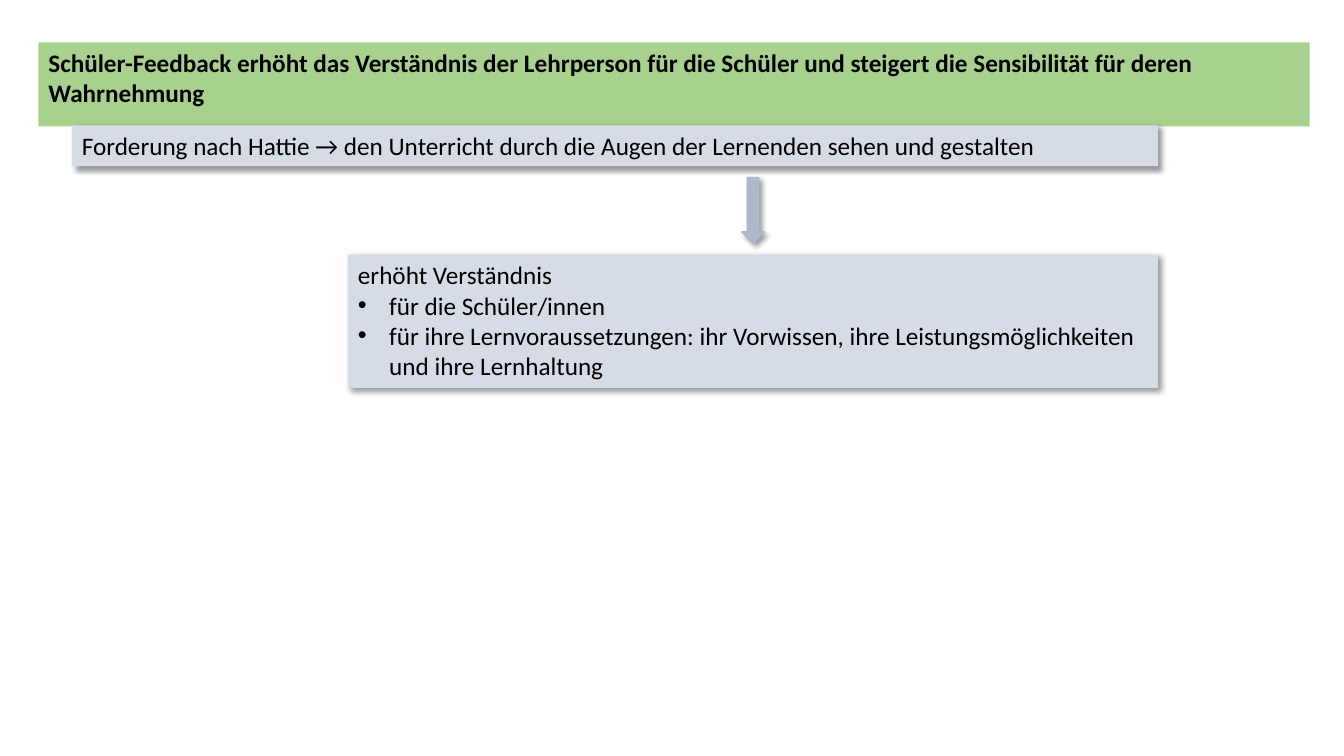
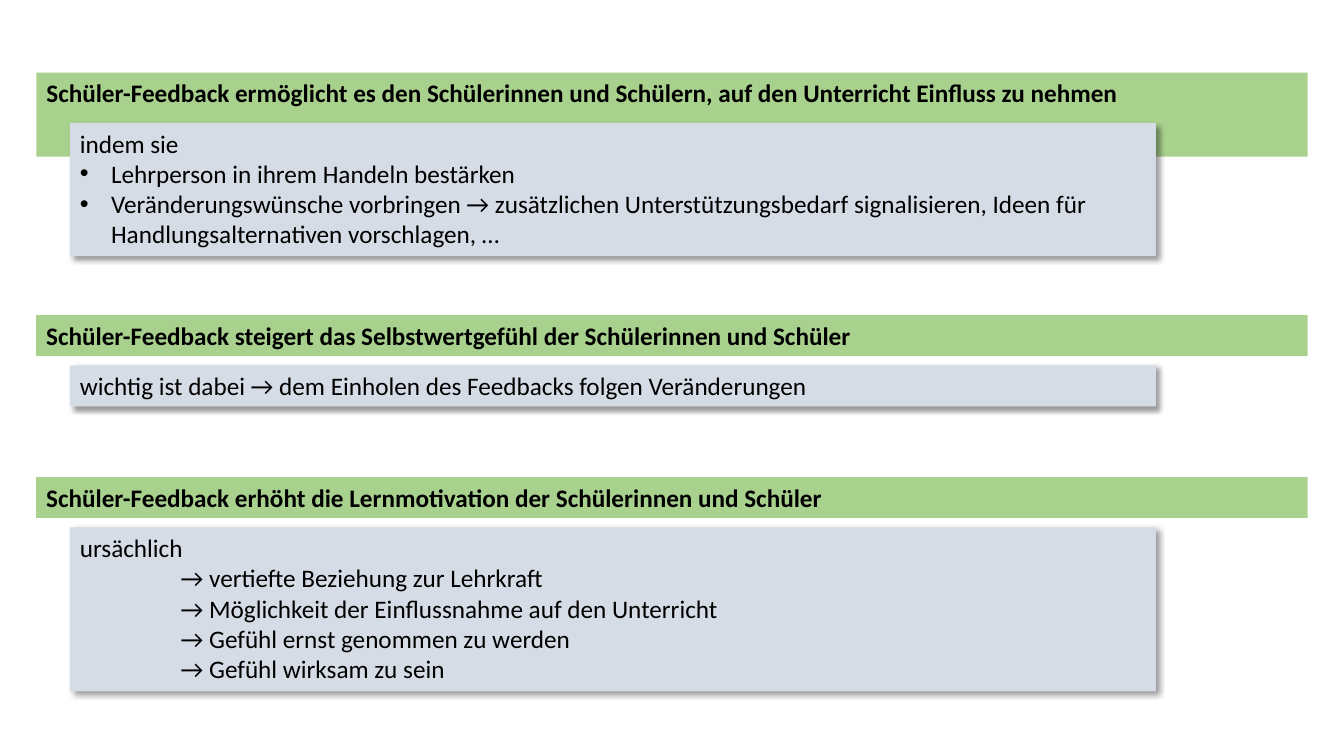
from lxml.etree import SubElement
from pptx import Presentation
from pptx.dml.color import RGBColor
from pptx.enum.shapes import MSO_SHAPE
from pptx.enum.text import MSO_ANCHOR, MSO_AUTO_SIZE, PP_ALIGN
from pptx.oxml.ns import qn
from pptx.util import Inches, Pt

GREEN = RGBColor(0xA9, 0xD1, 0x8E)
PALE = RGBColor(0xD6, 0xDC, 0xE5)
STEEL = RGBColor(0xAD, 0xB9, 0xCA)
BLACK = RGBColor(0, 0, 0)
FONT = "Calibri"
SIZE = Pt(18)
LINE = Pt(22)
WIDTH, HEIGHT = Inches(13.33), Inches(7.5)


def wide(part):
    """Length of a percentage of the slide width."""
    return int(WIDTH * part / 100)


def tall(part):
    """Length of a percentage of the slide height."""
    return int(HEIGHT * part / 100)


def room(rows):
    """Height of a box with the given number of text rows."""
    return Inches(0.1) + rows * LINE


BAND = wide(94.6)
INSET = wide(2.5)
BOX = wide(80.8)
BULLET = Inches(0.31)
TAB = Inches(1)


def place(shape, left, top, width, height):
    shape.left, shape.top = left, top
    shape.width, shape.height = width, height


def paint(shape, color):
    shape.fill.solid()
    shape.fill.fore_color.rgb = color


def shade(shape):
    """Give the shape a soft shadow to the lower right."""
    shape.shadow.inherit = False
    effects = shape._element.spPr.find(qn("a:effectLst"))
    outer = SubElement(effects, qn("a:outerShdw"), blurRad=str(Pt(4)),
                       dist=str(Pt(3)), dir="2700000", algn="tl", rotWithShape="0")
    color = SubElement(outer, qn("a:srgbClr"), val="000000")
    SubElement(color, qn("a:alpha"), val="40000")


def indent(para, left, mark=None):
    """Indent a paragraph, with a hanging bullet if a mark is given."""
    props = para._p.get_or_add_pPr()
    props.set("marL", str(left))
    if mark:
        props.set("indent", str(-left))
        SubElement(props, qn("a:buFont"), typeface="Arial")
        SubElement(props, qn("a:buChar"), char=mark)


def write(shape, lines, bold=False, left=0, mark=None):
    """Write a lead line and, below it, indented lines."""
    frame = shape.text_frame
    frame.word_wrap = True
    frame.auto_size = MSO_AUTO_SIZE.SHAPE_TO_FIT_TEXT
    frame.vertical_anchor = MSO_ANCHOR.TOP
    frame.text = "\n".join(lines)
    for row, para in enumerate(frame.paragraphs):
        para.alignment = PP_ALIGN.LEFT
        if row:
            indent(para, left, mark)
        font = para.font
        font.name, font.size, font.bold = FONT, SIZE, bold
        font.color.rgb = BLACK


def band(slide, left, top, text, rows=1, title=False):
    """Add a green headline band and return its lower edge."""
    shape = slide.shapes.title if title else slide.shapes.add_textbox(0, 0, 0, 0)
    place(shape, left, top, BAND, room(rows))
    paint(shape, GREEN)
    write(shape, [text], bold=True)
    return top + room(rows)


def box(slide, left, top, width, rows, lines, step=0, mark=None):
    """Add a shaded text box and return its lower edge."""
    shape = slide.shapes.add_textbox(left, top, width, room(rows))
    paint(shape, PALE)
    shade(shape)
    write(shape, lines, left=step, mark=mark)
    return top + room(rows)


def arrow(slide, mid, top, height):
    """Add a down arrow centred on mid and return its lower edge."""
    width = wide(1.7)
    shape = slide.shapes.add_shape(MSO_SHAPE.DOWN_ARROW, mid - width // 2, top, width, height)
    paint(shape, STEEL)
    shape.line.color.rgb = STEEL
    shape.line.width = Pt(1)
    shade(shape)
    return top + height


def insight(slide):
    left, gap = wide(2.85), tall(1.5)
    start = left + INSET
    end = start + BOX
    inner = wide(25.9)
    low = band(slide, left, tall(5.6),
               "Schüler-Feedback erhöht das Verständnis der Lehrperson für die Schüler "
               "und steigert die Sensibilität für deren Wahrnehmung", rows=2, title=True)
    low = box(slide, start, low + gap, BOX, 1,
              ["Forderung nach Hattie → den Unterricht durch die Augen der Lernenden "
               "sehen und gestalten"])
    low = arrow(slide, (inner + end) // 2, low + gap, tall(8.7))
    box(slide, inner, low + gap, end - inner, 4,
        ["erhöht Verständnis",
         "für die Schüler/innen",
         "für ihre Lernvoraussetzungen: ihr Vorwissen, ihre Leistungsmöglichkeiten "
         "und ihre Lernhaltung"], BULLET, "•")


def effects(slide):
    left, gap = wide(2.7), tall(1.25)
    parts = [
        (9.6, "Schüler-Feedback ermöglicht es den Schülerinnen und Schülern, "
              "auf den Unterricht Einfluss zu nehmen",
         4, ["indem sie",
             "Lehrperson in ihrem Handeln bestärken",
             "Veränderungswünsche vorbringen → zusätzlichen Unterstützungsbedarf "
             "signalisieren, Ideen für Handlungsalternativen vorschlagen, …"],
         BULLET, "•"),
        (41.7, "Schüler-Feedback steigert das Selbstwertgefühl der Schülerinnen und Schüler",
         1, ["wichtig ist dabei → dem Einholen des Feedbacks folgen Veränderungen"],
         0, None),
        (63.1, "Schüler-Feedback erhöht die Lernmotivation der Schülerinnen und Schüler",
         5, ["ursächlich",
             "→ vertiefte Beziehung zur Lehrkraft",
             "→ Möglichkeit der Einflussnahme auf den Unterricht",
             "→ Gefühl ernst genommen zu werden",
             "→ Gefühl wirksam zu sein"],
         TAB, None),
    ]
    for order, (top, head, rows, lines, step, mark) in enumerate(parts):
        low = band(slide, left, tall(top), head, title=order == 0)
        box(slide, left + INSET, low + gap, BOX, rows, lines, step, mark)


def main():
    deck = Presentation()
    deck.slide_width, deck.slide_height = WIDTH, HEIGHT
    layout = deck.slide_layouts.get_by_name("Title Only")
    for fill in (insight, effects):
        fill(deck.slides.add_slide(layout))
    deck.save("out.pptx")


if __name__ == "__main__":
    main()
